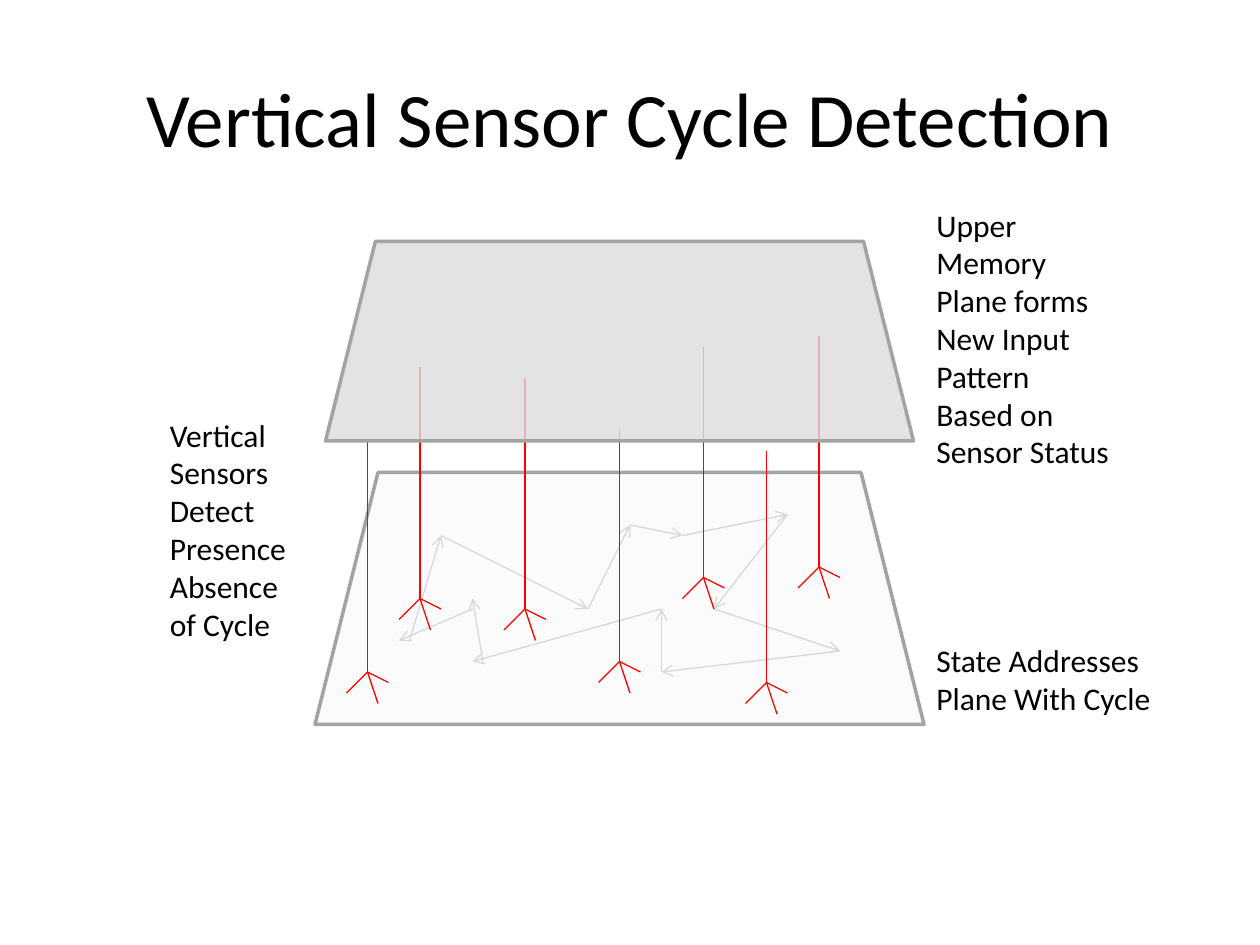
from itertools import pairwise

from pptx import Presentation
from pptx.dml.color import RGBColor
from pptx.enum.shapes import MSO_CONNECTOR, MSO_SHAPE
from pptx.enum.text import MSO_ANCHOR, MSO_AUTO_SIZE, PP_ALIGN
from pptx.oxml.ns import qn
from pptx.util import Emu, Pt
from lxml import etree

STRAIGHT = MSO_CONNECTOR.STRAIGHT
TRAPEZOID = MSO_SHAPE.TRAPEZOID
TOP, MIDDLE = MSO_ANCHOR.TOP, MSO_ANCHOR.MIDDLE
LEFT, CENTER = PP_ALIGN.LEFT, PP_ALIGN.CENTER
NO_FIT, GROW = MSO_AUTO_SIZE.NONE, MSO_AUTO_SIZE.SHAPE_TO_FIT_TEXT

EMU_PER_PX = 9525  # 96 px to the inch

CYCLE = [(336, 408), (448, 464), (480, 400), (520, 408), (600, 392),
         (544, 464), (640, 496), (504, 512), (504, 464), (360, 504)]
CYCLE_RETURN = [((368, 504), (360, 456)), ((360, 464), (304, 488)),
                ((312, 488), (336, 408))]

SENSOR_JOINTS = [(280, 512), (400, 464), (320, 456), (472, 504),
                 (536, 440), (584, 520), (624, 432)]
STEM = 176
TOES = [(-16, 16), (8, 24), (16, 8)]

LABELS = [
    ("State Addresses Plane With Cycle", (704, 484, 184, 68)),
    ("Vertical Sensors Detect Presence Absence of Cycle", (120, 312, 120, 184)),
    ("Upper Memory Plane forms New Input Pattern Based on Sensor Status",
     (704, 152, 152, 213)),
]


def px(*values):
    return [Emu(v * EMU_PER_PX) for v in values]


def color(hex_string):
    return RGBColor.from_string(hex_string)


class Diagram:
    FONT = "Calibri"
    TEXT = "000000"
    PLANE = "DDDDDD"
    EDGE = "A3A3A3"
    PATH = "D8D8D8"
    SENSOR = "FF0000"

    def __init__(self, slide):
        self.slide = slide

    def text(self, text, box, size=18, align=LEFT, anchor=TOP, fit=GROW):
        tf = self.slide.shapes.add_textbox(*px(*box)).text_frame
        tf.word_wrap = True
        tf.auto_size = fit
        tf.vertical_anchor = anchor
        tf.text = text
        p = tf.paragraphs[0]
        p.alignment = align
        font = p.runs[0].font
        font.name = self.FONT
        font.size = Pt(size)
        font.color.rgb = color(self.TEXT)

    def plane(self, box, opacity):
        """Draw a translucent trapezoid; opacity is in percent."""
        sp = self.slide.shapes.add_shape(TRAPEZOID, *px(*box))
        sp.shadow.inherit = False
        sp.fill.solid()
        sp.fill.fore_color.rgb = color(self.PLANE)
        clr = sp.fill._xPr.find(qn("a:solidFill"))[0]
        etree.SubElement(clr, qn("a:alpha"), val=str(opacity * 1000))
        sp.line.color.rgb = color(self.EDGE)
        sp.line.width = Pt(2)

    def line(self, shapes, start, end, line_color):
        cxn = shapes.add_connector(STRAIGHT, *px(*start, *end))
        cxn.line.color.rgb = color(line_color)
        cxn.line.width = Pt(0.75)
        etree.SubElement(cxn._element.spPr, qn("a:effectLst"))
        return cxn

    def arrow(self, start, end):
        cxn = self.line(self.slide.shapes, start, end, self.PATH)
        etree.SubElement(cxn.line._get_or_add_ln(), qn("a:tailEnd"), type="arrow")

    def sensor(self, x, y):
        """Group a stem and three toes that meet at (x, y)."""
        shapes = self.slide.shapes.add_group_shape().shapes
        self.line(shapes, (x, y - STEM), (x, y), self.SENSOR)
        for dx, dy in TOES:
            self.line(shapes, (x, y), (x + dx, y + dy), self.SENSOR)


def main():
    prs = Presentation()
    prs.slide_width, prs.slide_height = px(960, 720)
    d = Diagram(prs.slides.add_slide(prs.slide_layouts[6]))

    d.text("Vertical Sensor Cycle Detection", (48, 29, 864, 120),
           size=44, align=CENTER, anchor=MIDDLE, fit=NO_FIT)
    d.plane((240, 360, 464, 192), opacity=9)
    for start, end in [*pairwise(CYCLE), *CYCLE_RETURN]:
        d.arrow(start, end)
    for joint in SENSOR_JOINTS:
        d.sensor(*joint)
    d.plane((248, 184, 448, 152), opacity=82)
    for label, box in LABELS:
        d.text(label, box)

    prs.save("out.pptx")


if __name__ == "__main__":
    main()
